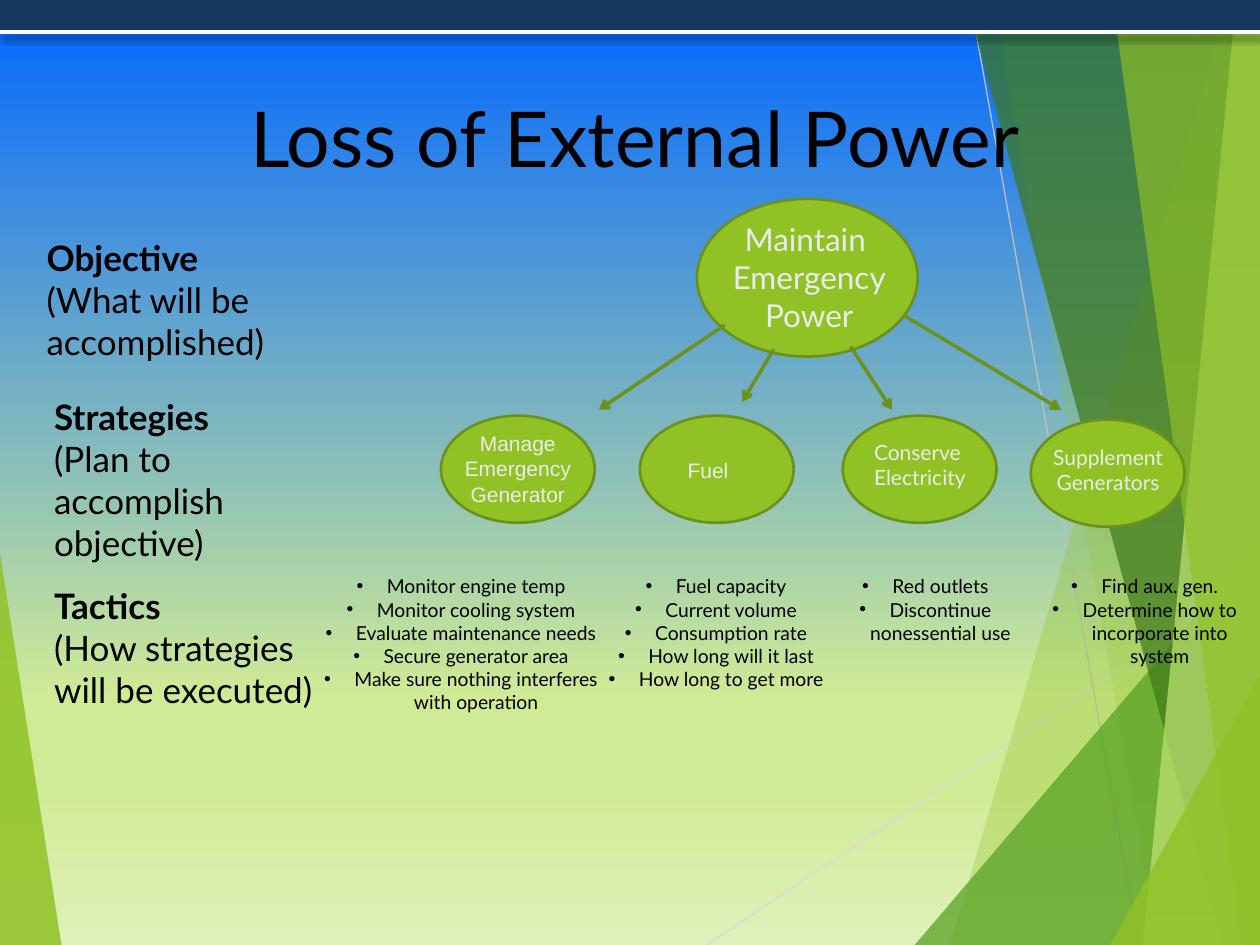
from lxml import etree
from pptx import Presentation
from pptx.dml.color import RGBColor
from pptx.enum.shapes import MSO_CONNECTOR, MSO_SHAPE
from pptx.enum.text import PP_ALIGN
from pptx.oxml.ns import qn
from pptx.util import Cm, Pt

CENTER, LEFT = PP_ALIGN.CENTER, PP_ALIGN.LEFT
STRAIGHT = MSO_CONNECTOR.STRAIGHT
OVAL, RECTANGLE = MSO_SHAPE.OVAL, MSO_SHAPE.RECTANGLE
WIDTH, HEIGHT = 25.4, 19.05
BLACK, PALE, GREEN = "000000", "EBEBEB", "90C226"
OVAL_EDGE, ARROW = "6B901C", "6C921D"
BAR_HEIGHT = 0.64
BULLET_INDENT = 0.61

SKY = [(0, "0066FF"), (74, "D0EB96"), (83, "D0EB96"), (100, "DFF1B9")]
FACETS = [
    (GREEN, 85, [(0, 11.15), (1.24, HEIGHT), (0, HEIGHT)]),
    (GREEN, 30, [(24.77, 0), (19.15, HEIGHT), (WIDTH, HEIGHT), (WIDTH, 0)]),
    (GREEN, 20, [(20.02, 0), (23.34, HEIGHT), (WIDTH, HEIGHT), (WIDTH, 0)]),
    ("54A021", 72, [(18.44, HEIGHT), (WIDTH, 10.9), (WIDTH, HEIGHT)]),
    ("3F7819", 70, [(19.48, 0), (24.64, HEIGHT), (WIDTH, HEIGHT), (WIDTH, 0)]),
    ("C0E474", 70, [(24.92, 0), (23.04, HEIGHT), (WIDTH, HEIGHT), (WIDTH, 0)]),
    (GREEN, 65, [(22.43, 0), (25.04, HEIGHT), (WIDTH, HEIGHT), (WIDTH, 0)]),
    (GREEN, 80, [(22.38, HEIGHT), (WIDTH, 13.59), (WIDTH, HEIGHT)]),
]
ARROWS = [
    ((14.61, 6.55), (12.07, 8.26)),
    ((15.6, 7.04), (14.96, 8.1)),
    ((17.15, 6.99), (17.98, 8.26)),
    ((18.21, 6.35), (21.39, 8.26)),
]
LEVELS = [
    ((0.69, 4.65), "Objective", ["(What will be accomplished)"]),
    ((0.84, 7.85), "Strategies", ["(Plan to accomplish objective)"]),
    ((0.84, 11.66), "Tactics", ["(How strategies", "will be executed)"]),
]
STRATEGIES = [
    ((8.89, 8.38), (9.07, 8.56, 2.74, 1.8), "Arial", CENTER,
     ["Manage", "Emergency", "Generator"]),
    ((12.9, 8.38), (12.37, 9.09, 3.81, 0.76), "Arial", CENTER, ["Fuel"]),
    ((16.99, 8.38), (17.37, 8.74, 2.54, 1.27), "Lato", LEFT,
     ["Conserve", "Electricity"]),
    ((20.78, 8.46), (20.75, 8.84, 3.18, 1.27), "Lato", CENTER,
     ["Supplement", "Generators"]),
]
TACTICS = [
    (6.22, 6.15, ["Monitor engine temp", "Monitor cooling system",
                  "Evaluate maintenance needs", "Secure generator area",
                  "Make sure nothing interferes with operation"]),
    (11.68, 5.51, ["Fuel capacity", "Current volume", "Consumption rate",
                   "How long will it last", "How long to get more"]),
    (16.33, 4.65, ["Red outlets", "Discontinue nonessential use"]),
    (20.75, 4.65, ["Find aux. gen.",
                   "Determine how to incorporate into system"]),
]


def color(value):
    return RGBColor.from_string(value)


def child(parent, tag, **attributes):
    values = {name: str(value) for name, value in attributes.items()}
    return etree.SubElement(parent, qn(tag), values)


def add_shadow(effects, value, alpha, blur, distance, angle):
    shadow = child(effects, "a:outerShdw", blurRad=Pt(blur), dist=Pt(distance),
                   dir=angle * 60000, algn="ctr", rotWithShape=0)
    child(child(shadow, "a:srgbClr", val=value), "a:alpha", val=alpha * 1000)


def paint_background(slide):
    fill = slide.background.fill
    fill.gradient()
    fill.gradient_angle = 270
    stops = slide.element.find(".//" + qn("a:gsLst"))
    for stop in list(stops):
        stops.remove(stop)
    for position, value in SKY:
        stop = child(stops, "a:gs", pos=position * 1000)
        child(stop, "a:srgbClr", val=value)


def style_shape(shape, fill, edge=None):
    shape.shadow.inherit = False
    shape.fill.solid()
    shape.fill.fore_color.rgb = color(fill)
    if edge:
        shape.line.color.rgb = color(edge)
        shape.line.width = Pt(1.5)
    else:
        shape.line.fill.background()


def add_facet(slide, fill, opacity, points):
    corners = [(Cm(x), Cm(y)) for x, y in points]
    builder = slide.shapes.build_freeform(*corners[0])
    builder.add_line_segments(corners[1:], close=True)
    shape = builder.convert_to_shape()
    style_shape(shape, fill)
    solid = shape.element.spPr.find(qn("a:solidFill"))
    child(solid[0], "a:alpha", val=opacity * 1000)


def add_preset(slide, preset, left, top, width, height, fill, edge=None):
    shape = slide.shapes.add_shape(preset, Cm(left), Cm(top), Cm(width), Cm(height))
    style_shape(shape, fill, edge)


def add_line(slide, start, end, value, width, arrow=False):
    connector = slide.shapes.add_connector(
        STRAIGHT, *[Cm(length) for length in (*start, *end)])
    connector.line.color.rgb = color(value)
    connector.line.width = Pt(width)
    if arrow:
        child(connector.line._get_or_add_ln(), "a:tailEnd", type="arrow")
    return child(connector.element.spPr, "a:effectLst")


def add_frame(slide, left, top, width, height):
    box = slide.shapes.add_textbox(Cm(left), Cm(top), Cm(width), Cm(height))
    box.text_frame.word_wrap = True
    return box.text_frame


def add_run(paragraph, text, size, value, font="Lato", bold=False):
    run = paragraph.add_run()
    run.text = text
    run.font.size = Pt(size)
    run.font.color.rgb = color(value)
    run.font.name = font
    run.font.bold = bold
    return run


def add_lines(frame, lines, size, value, font="Lato", align=CENTER, bulleted=False):
    for index, text in enumerate(lines):
        paragraph = frame.add_paragraph() if index else frame.paragraphs[0]
        paragraph.alignment = align
        add_run(paragraph, text, size, value, font)
        if bulleted:
            properties = paragraph._p.get_or_add_pPr()
            properties.set("marL", str(Cm(BULLET_INDENT)))
            properties.set("indent", str(-Cm(BULLET_INDENT)))
            child(properties, "a:buFont", typeface="Arial")
            child(properties, "a:buChar", char="•")


def add_title(slide):
    paragraph = add_frame(slide, 1.7, 1.7, 22.2, 3.66).paragraphs[0]
    paragraph.alignment = CENTER
    run = add_run(paragraph, "Loss of External Power", 44, BLACK)
    effects = etree.Element(qn("a:effectLst"))
    add_shadow(effects, "C0C0C0", 100, 0, 3, 45)
    run.font._element.find(qn("a:solidFill")).addnext(effects)


def add_level(slide, position, heading, lines):
    frame = add_frame(slide, *position, 6.35, 2.82)
    add_run(frame.paragraphs[0], heading, 20, BLACK, bold=True)
    paragraph = frame.add_paragraph()
    for index, text in enumerate(lines):
        if index:
            paragraph.add_line_break()
        add_run(paragraph, text, 20, BLACK)


def add_backdrop(slide):
    paint_background(slide)
    add_line(slide, (14.25, HEIGHT), (WIDTH, 11.61), "D9D9D9", 0.75)
    add_line(slide, (19.56, 0), (22.96, HEIGHT), "BFBFBF", 0.75)
    for facet in FACETS:
        add_facet(slide, *facet)
    add_preset(slide, RECTANGLE, 0, 0, WIDTH, BAR_HEIGHT, "17375E")
    effects = add_line(slide, (WIDTH, BAR_HEIGHT), (0, BAR_HEIGHT), "FFFFFF", 2)
    add_shadow(effects, BLACK, 40, 4, 3, 90)


def main():
    presentation = Presentation()
    presentation.slide_width, presentation.slide_height = Cm(WIDTH), Cm(HEIGHT)
    slide = presentation.slides.add_slide(presentation.slide_layouts[6])
    add_backdrop(slide)
    add_title(slide)
    for level in LEVELS:
        add_level(slide, *level)
    add_preset(slide, OVAL, 14.05, 4.01, 4.45, 3.18, GREEN, OVAL_EDGE)
    add_lines(add_frame(slide, 13.56, 4.32, 5.51, 2.57),
              ["Maintain ", "Emergency", "Power"], 18, PALE)
    for start, end in ARROWS:
        add_line(slide, start, end, ARROW, 2, arrow=True)
    for position, text_area, font, align, lines in STRATEGIES:
        add_preset(slide, OVAL, *position, 3.1, 2.16, GREEN, OVAL_EDGE)
        add_lines(add_frame(slide, *text_area), lines, 12, PALE, font, align)
    for left, width, lines in TACTICS:
        add_lines(add_frame(slide, left, 11.46, width, 3.07), lines, 11, BLACK,
                  bulleted=True)
    presentation.save("out.pptx")


if __name__ == "__main__":
    main()
